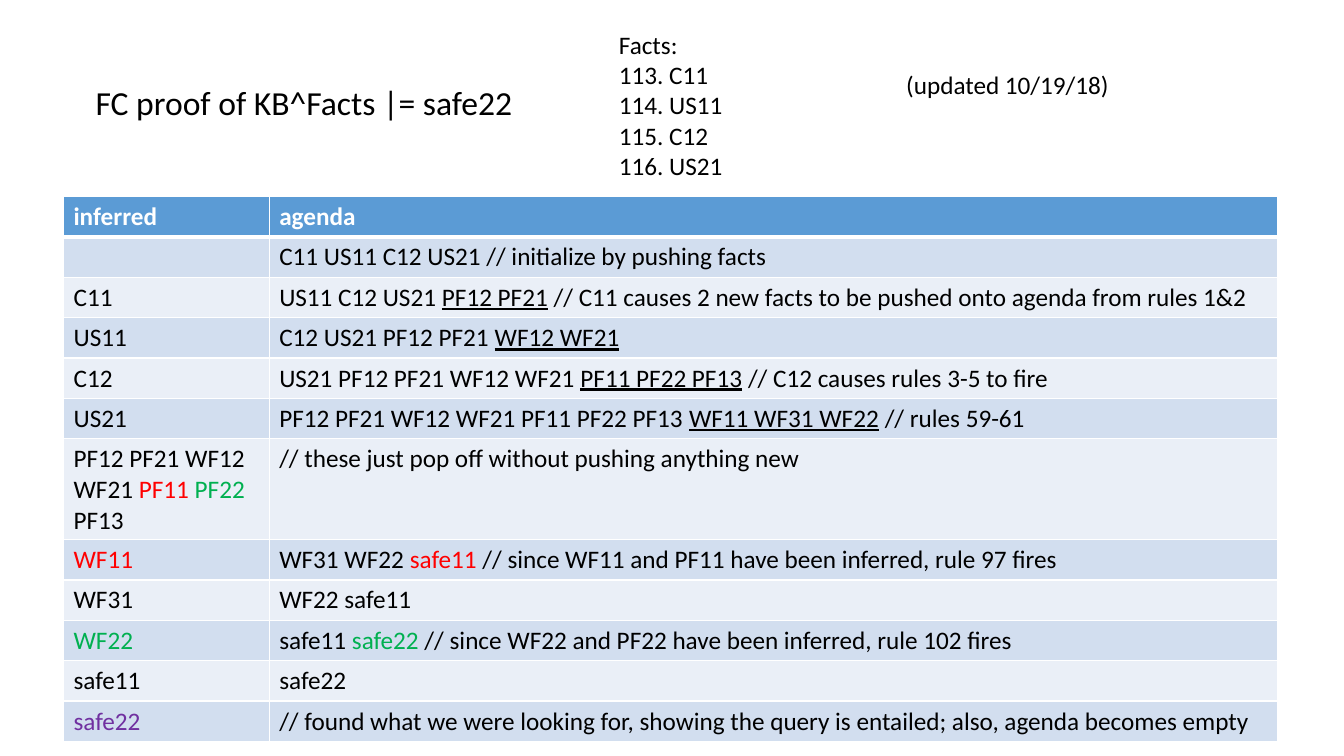
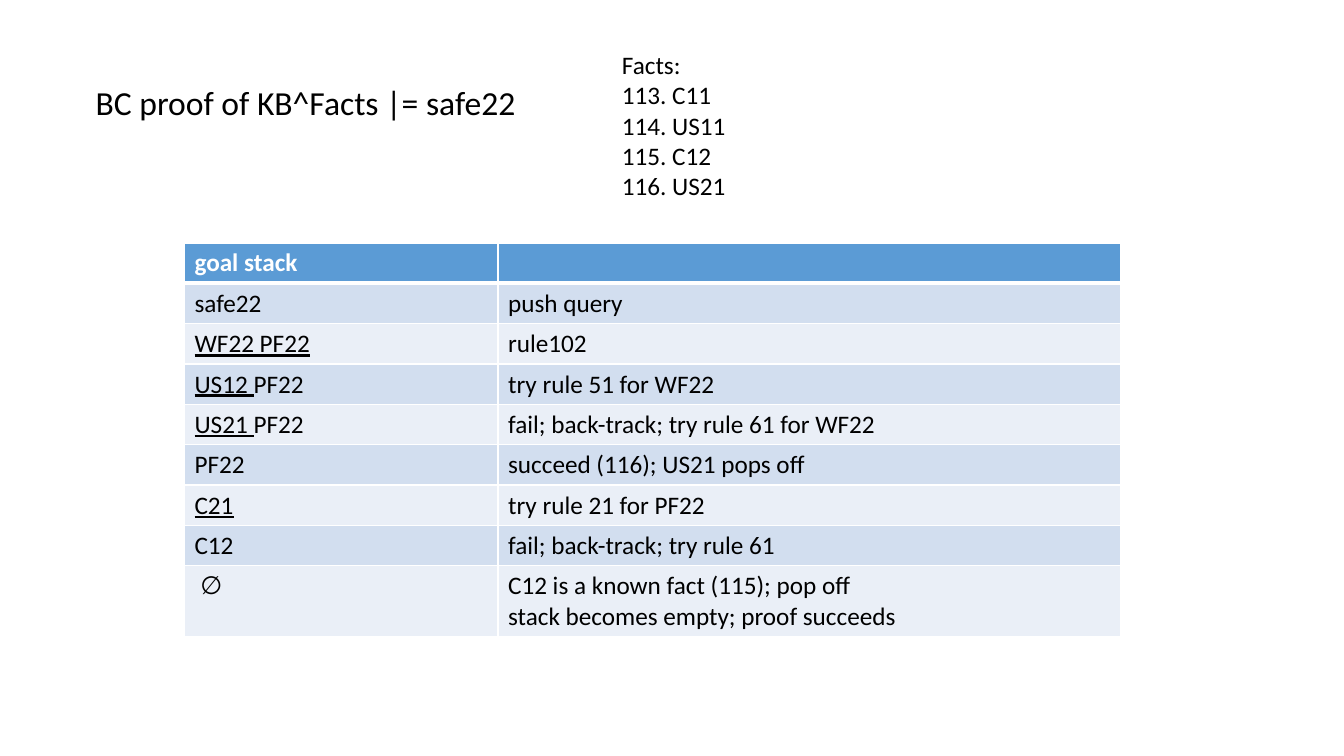
from typing import NamedTuple

import pptx
import pptx.dml.color
import pptx.enum.text
import pptx.oxml
import pptx.oxml.ns
import pptx.slide
import pptx.table
import pptx.text.text
import pptx.util
from pptx.util import Inches

FONT = "Calibri"
BODY_SIZE = 18
TITLE_SIZE = 24
ROW_HEIGHT = 0.4  # rows grow to fit their text

COLORS = {
    "text": "000000",
    "white": "FFFFFF",
    "header": "5B9BD5",
    "odd_row": "D2DEEF",
    "even_row": "EAEFF7",
    "red": "FF0000",
    "green": "00B050",
    "purple": "7030A0",
}

FACTS = "Facts:\n113. C11\n114. US11\n115. C12\n116. US21"


class Span(NamedTuple):
    text: str
    color: str = "text"
    underline: bool = False


Content = str | list[Span]


class Label(NamedTuple):
    text: str
    left: float
    top: float
    width: float
    height: float
    size: int = BODY_SIZE


class ProofTable(NamedTuple):
    left: float
    top: float
    widths: tuple[float, float]
    header: tuple[str, str]
    steps: list[tuple[Content, Content]]


class ProofSlide(NamedTuple):
    labels: list[Label]
    table: ProofTable


def pushed(text: str) -> Span:
    """Facts or goals newly added in a step."""
    return Span(text, underline=True)


def red(text: str) -> Span:
    return Span(text, "red")


def green(text: str) -> Span:
    return Span(text, "green")


FORWARD = ProofSlide(
    [
        Label("FC proof of KB^Facts |= safe22", 0.85, 0.76, 4.37, 0.91, TITLE_SIZE),
        Label(FACTS, 6.04, 0.24, 1.24, 1.62),
        Label("(updated 10/19/18)", 8.89, 0.64, 2.24, 0.4),
    ],
    ProofTable(0.63, 1.95, (2.04, 10), ("inferred", "agenda"), [
        ("", "C11 US11 C12 US21 // initialize by pushing facts"),
        ("C11", [Span("US11 C12 US21 "), pushed("PF12 PF21"),
                 Span(" // C11 causes 2 new facts to be pushed onto agenda from rules 1&2")]),
        ("US11", [Span("C12 US21 PF12 PF21 "), pushed("WF12 WF21")]),
        ("C12", [Span("US21 PF12 PF21 WF12 WF21 "), pushed("PF11 PF22 PF13"),
                 Span(" // C12 causes rules 3-5 to fire")]),
        ("US21", [Span("PF12 PF21 WF12 WF21 PF11 PF22 PF13 "), pushed("WF11 WF31 WF22"),
                  Span(" // rules 59-61")]),
        ([Span("PF12 PF21 WF12 WF21 "), red("PF11 "), green("PF22 "), Span("PF13")],
         "// these just pop off without pushing anything new"),
        ([red("WF11")], [Span("WF31 WF22 "), red("safe11"),
                         Span(" // since WF11 and PF11 have been inferred, rule 97 fires")]),
        ("WF31", "WF22 safe11"),
        ([green("WF22")], [Span("safe11 "), green("safe22"),
                           Span(" // since WF22 and PF22 have been inferred, rule 102 fires")]),
        ("safe11", "safe22"),
        ([Span("safe22", "purple")],
         "// found what we were looking for, showing the query is entailed; "
         "also, agenda becomes empty"),
    ]),
)

BACKWARD = ProofSlide(
    [
        Label("BC proof of KB^Facts |= safe22", 0.85, 0.76, 4.4, 0.91, TITLE_SIZE),
        Label(FACTS, 6.07, 0.44, 1.24, 1.62),
    ],
    ProofTable(1.83, 2.41, (3.11, 6.17), ("goal stack", ""), [
        ("safe22", "push query"),
        ([pushed("WF22 PF22")], "rule102"),
        ([pushed("US12 "), Span("PF22")], "try rule 51 for WF22"),
        ([pushed("US21 "), Span("PF22")], "fail; back-track; try rule 61 for WF22"),
        ("PF22", "succeed (116); US21 pops off"),
        ([pushed("C21")], "try rule 21 for PF22"),
        ("C12", "fail; back-track; try rule 61"),
        (" ∅", "C12 is a known fact (115); pop off\nstack becomes empty; proof succeeds"),
    ]),
)


def rgb(color: str) -> pptx.dml.color.RGBColor:
    return pptx.dml.color.RGBColor.from_string(COLORS[color])


def style_font(font: pptx.text.text.Font, size: int, color: str, bold: bool = False) -> None:
    font.name = FONT
    font.size = pptx.util.Pt(size)
    font.bold = bold
    font.color.rgb = rgb(color)


def write_text(frame: pptx.text.text.TextFrame, text: str, size: int,
               color: str = "text", bold: bool = False) -> None:
    frame.text = text
    for paragraph in frame.paragraphs:
        for run in paragraph.runs:
            style_font(run.font, size, color, bold)


def write_spans(frame: pptx.text.text.TextFrame, spans: list[Span]) -> None:
    for span in spans:
        run = frame.paragraphs[0].add_run()
        run.text = span.text
        style_font(run.font, BODY_SIZE, span.color)
        run.font.underline = span.underline


def add_label(slide: pptx.slide.Slide, label: Label) -> None:
    box = slide.shapes.add_textbox(Inches(label.left), Inches(label.top),
                                   Inches(label.width), Inches(label.height))
    write_text(box.text_frame, label.text, label.size)
    box.text_frame.word_wrap = False
    box.text_frame.auto_size = pptx.enum.text.MSO_AUTO_SIZE.SHAPE_TO_FIT_TEXT


def set_borders(cell: pptx.table._Cell, top: int, bottom: int) -> None:
    """Draw white borders; top and bottom are widths in points."""
    properties = cell._tc.get_or_add_tcPr()
    widths = {"lnL": 1, "lnR": 1, "lnT": top, "lnB": bottom}
    for position, (side, width) in enumerate(widths.items()):
        properties.insert(position, pptx.oxml.parse_xml(
            f'<a:{side} {pptx.oxml.ns.nsdecls("a")} w="{pptx.util.Pt(width)}">'
            f'<a:solidFill><a:srgbClr val="{COLORS["white"]}"/></a:solidFill></a:{side}>'))


def add_proof_table(slide: pptx.slide.Slide, proof: ProofTable) -> None:
    rows = [proof.header, *proof.steps]
    table = slide.shapes.add_table(
        len(rows), len(proof.widths), Inches(proof.left), Inches(proof.top),
        Inches(sum(proof.widths)), Inches(ROW_HEIGHT * len(rows))).table
    for column, width in zip(table.columns, proof.widths):
        column.width = Inches(width)
    for row_index, row in enumerate(rows):
        is_header = row_index == 0
        band = "header" if is_header else "odd_row" if row_index % 2 else "even_row"
        for column_index, content in enumerate(row):
            cell = table.cell(row_index, column_index)
            cell.fill.solid()
            cell.fill.fore_color.rgb = rgb(band)
            set_borders(cell, top=3 if row_index == 1 else 1, bottom=3 if is_header else 1)
            if isinstance(content, str):
                write_text(cell.text_frame, content, BODY_SIZE,
                           "white" if is_header else "text", is_header)
            else:
                write_spans(cell.text_frame, content)


def main() -> None:
    presentation = pptx.Presentation()
    presentation.slide_width = Inches(13.33)
    presentation.slide_height = Inches(7.5)
    for proof in (FORWARD, BACKWARD):
        slide = presentation.slides.add_slide(presentation.slide_layouts[6])
        for label in proof.labels:
            add_label(slide, label)
        add_proof_table(slide, proof.table)
    presentation.save("out.pptx")


if __name__ == "__main__":
    main()
